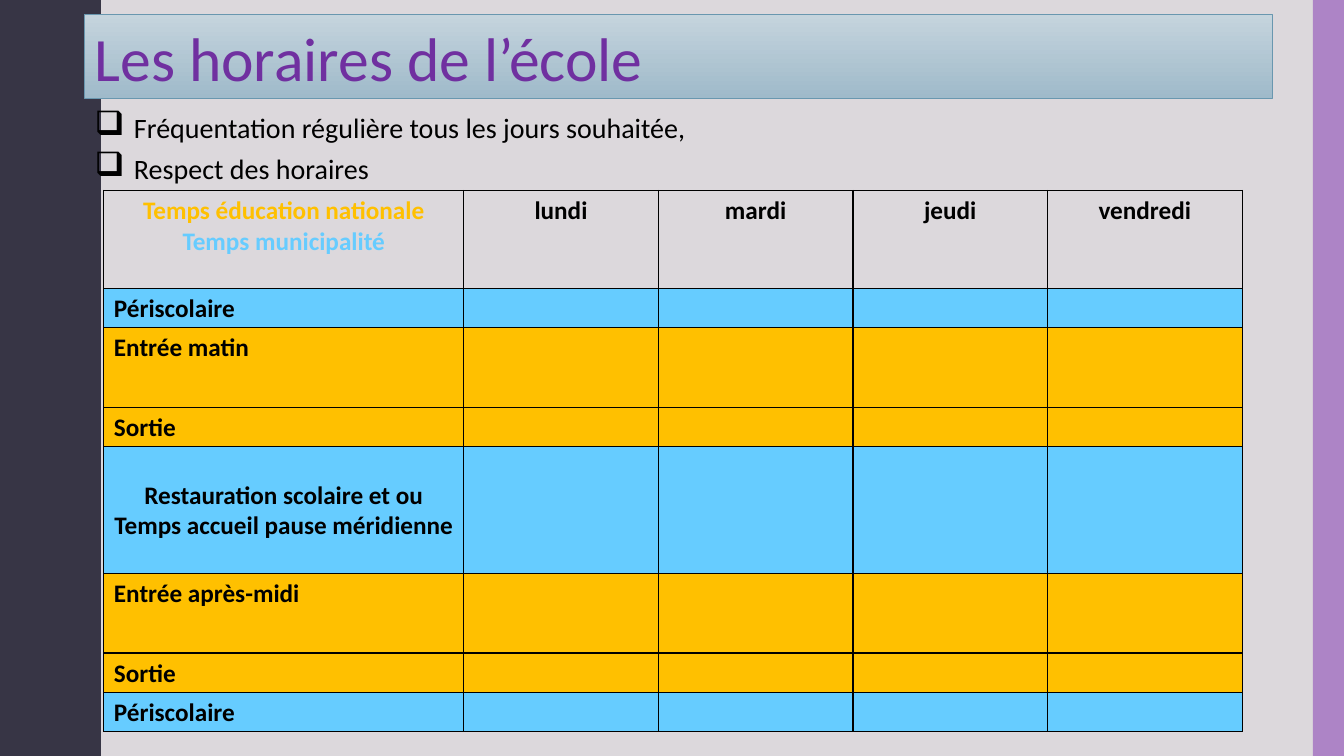
from pptx import Presentation
from pptx import util as u
from pptx.dml.color import RGBColor
from pptx.enum import shapes, text
from pptx.oxml import parse_xml
from pptx.oxml.ns import nsdecls

NIGHT = RGBColor(0x37, 0x35, 0x45)
LILAC = RGBColor(0xAD, 0x84, 0xC6)
PAPER = RGBColor(0xDC, 0xD8, 0xDC)
MIST = RGBColor(0xC5, 0xD4, 0xDD)
STEEL = RGBColor(0x9F, 0xBA, 0xCA)
EDGE = RGBColor(0x69, 0x97, 0xAF)
PURPLE = RGBColor(0x70, 0x30, 0xA0)
BLACK = RGBColor(0, 0, 0)
GOLD = RGBColor(0xFF, 0xC0, 0x00)
SKY = RGBColor(0x66, 0xCC, 0xFF)

LEFT, CENTER = text.PP_ALIGN.LEFT, text.PP_ALIGN.CENTER
TOP, MIDDLE = text.MSO_ANCHOR.TOP, text.MSO_ANCHOR.MIDDLE

HALF_WAVE = [(0.78, 0), (0.78, 0.07), (0.79, 0.14), (0.8, 0.2), (0.81, 0.25),
             (0.83, 0.29), (0.85, 0.33), (0.87, 0.38), (0.89, 0.42), (0.91, 0.46),
             (0.93, 0.5), (0.95, 0.55), (0.96, 0.61), (0.97, 0.68), (0.97, 0.75)]
HALF_HEIGHT = 0.75

RULES = ["Fréquentation régulière tous les jours souhaitée,", "Respect des horaires"]
DAYS = ["lundi", "mardi", "jeudi", "vendredi"]
COLUMN_WIDTHS = [3.57] + [1.93] * len(DAYS)
HEADER = [("Temps éducation nationale", GOLD), ("Temps municipalité", SKY)]
HEADER_HEIGHT = 0.97
PERIODS = [
    (["Périscolaire"], 0.39, SKY, LEFT, MIDDLE),
    (["Entrée matin"], 0.79, GOLD, LEFT, TOP),
    (["Sortie"], 0.39, GOLD, LEFT, TOP),
    (["Restauration scolaire et ou", "Temps accueil pause méridienne"],
     1.26, SKY, CENTER, MIDDLE),
    (["Entrée après-midi"], 0.79, GOLD, LEFT, TOP),
    (["Sortie"], 0.39, GOLD, LEFT, TOP),
    (["Périscolaire"], 0.39, SKY, LEFT, MIDDLE),
]


def apply(target, values):
    for name, value in values.items():
        setattr(target, name, value)


def write(para, words, size, color, bold=False):
    span = para.add_run()
    span.text = words
    apply(span.font, {"name": "Calibri", "size": u.Pt(size), "bold": bold})
    span.font.color.rgb = color


def write_lines(frame, lines, align):
    for index, (words, color) in enumerate(lines):
        para = frame.add_paragraph() if index else frame.paragraphs[0]
        para.alignment = align
        write(para, words, 18, color, True)


def paint(shape, color):
    shape.shadow.inherit = False
    shape.fill.solid()
    shape.fill.fore_color.rgb = color
    shape.line.fill.background()


def add_wave(page, height):
    points = []
    for half in range(round(height / HALF_HEIGHT)):
        start = half * HALF_HEIGHT
        if half % 2:
            points += [(x, start + HALF_HEIGHT - y) for x, y in reversed(HALF_WAVE)]
        else:
            points += [(x, start + y) for x, y in HALF_WAVE]
    builder = page.shapes.build_freeform(0, 0, scale=u.Inches(1))
    builder.add_line_segments(points + [(0, height)], close=True)
    paint(builder.convert_to_shape(), NIGHT)


def add_side_band(page, box):
    band = page.shapes.add_shape(shapes.MSO_SHAPE.RECTANGLE, *map(u.Inches, box))
    paint(band, LILAC)


def add_title(page, box):
    banner = page.shapes.add_shape(shapes.MSO_SHAPE.RECTANGLE, *map(u.Inches, box))
    banner.shadow.inherit = False
    banner.fill.gradient()
    banner.fill.gradient_angle = 270
    for stop, color in zip(banner.fill.gradient_stops, [MIST, STEEL]):
        stop.color.rgb = color
    banner.line.color.rgb = EDGE
    banner.line.width = u.Pt(0.5)
    frame = banner.text_frame
    apply(frame, {"word_wrap": True, "vertical_anchor": MIDDLE})
    para = frame.paragraphs[0]
    para.alignment = LEFT
    write(para, "Les horaires de l’école", 44, PURPLE)


def add_rules(page, box):
    frame = page.shapes.add_textbox(*map(u.Inches, box)).text_frame
    frame.word_wrap = True
    for index, words in enumerate(RULES):
        para = frame.add_paragraph() if index else frame.paragraphs[0]
        properties = para._p.get_or_add_pPr()
        properties.set("marL", str(u.Inches(0.39)))
        properties.set("indent", str(-u.Inches(0.39)))
        properties.append(parse_xml(f'<a:buSzPct {nsdecls("a")} val="120000"/>'))
        properties.append(parse_xml(f'<a:buChar {nsdecls("a")} char="❑"/>'))
        para.line_spacing = u.Pt(29)
        write(para, words, 20, BLACK)


def add_borders(cell):
    properties = cell._tc.get_or_add_tcPr()
    for position, side in enumerate(["lnL", "lnR", "lnT", "lnB"]):
        properties.insert(position, parse_xml(
            f'<a:{side} {nsdecls("a")} w="{u.Pt(1)}"><a:solidFill>'
            f'<a:srgbClr val="{BLACK}"/></a:solidFill></a:{side}>'))


def add_timetable(page, box):
    table = page.shapes.add_table(
        len(PERIODS) + 1, len(COLUMN_WIDTHS), *map(u.Inches, box)).table
    apply(table, {"first_row": False, "horz_banding": False})
    for column, width in zip(table.columns, COLUMN_WIDTHS):
        column.width = u.Inches(width)
    heights = [HEADER_HEIGHT] + [period[1] for period in PERIODS]
    for row, height in zip(table.rows, heights):
        row.height = u.Inches(height)
    for cell in table.iter_cells():
        apply(cell, {"margin_top": u.Inches(0.05), "margin_bottom": u.Inches(0.03)})
        cell.fill.background()
        add_borders(cell)
    write_lines(table.cell(0, 0).text_frame, HEADER, CENTER)
    for column, day in enumerate(DAYS, 1):
        write_lines(table.cell(0, column).text_frame, [(day, BLACK)], CENTER)
    for row, (lines, _, color, align, anchor) in enumerate(PERIODS, 1):
        for cell in table.rows[row].cells:
            cell.fill.solid()
            cell.fill.fore_color.rgb = color
        label = table.cell(row, 0)
        label.vertical_anchor = anchor
        write_lines(label.text_frame, [(words, BLACK) for words in lines], align)


def main():
    deck = Presentation()
    apply(deck, {"slide_width": u.Inches(13.33), "slide_height": u.Inches(7.5)})
    page = deck.slides.add_slide(deck.slide_layouts[6])
    page.background.fill.solid()
    page.background.fill.fore_color.rgb = PAPER
    add_wave(page, 7.5)
    add_side_band(page, (13.02, 0, 0.31, 7.5))
    add_title(page, (0.84, 0.14, 11.78, 0.84))
    add_rules(page, (0.84, 0.98, 9.09, 0.91))
    add_timetable(page, (1.03, 1.89, 11.31, 5.41))
    deck.save("out.pptx")


if __name__ == "__main__":
    main()
